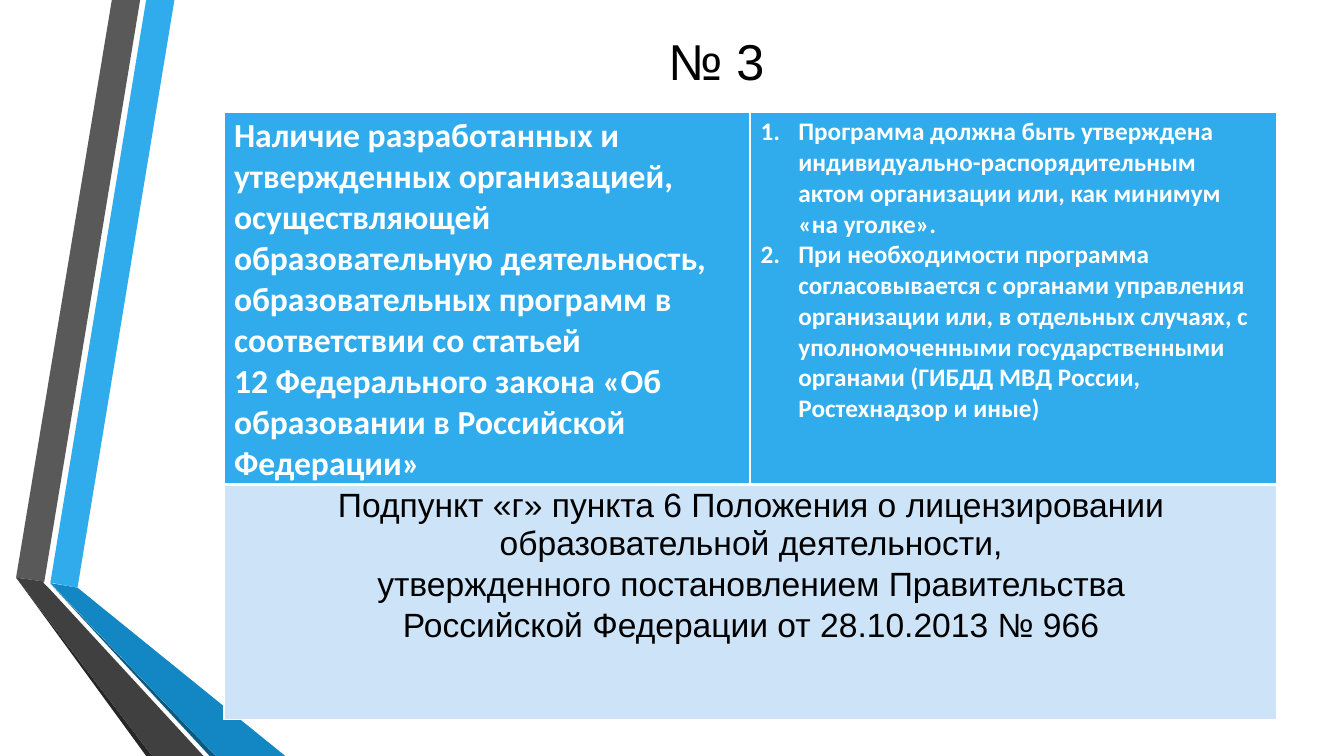
from pptx import Presentation, util as u
from pptx.dml.color import RGBColor
from pptx.enum import text as t
from pptx.oxml.ns import qn
from lxml import etree


def color(fmt, tone):
    fmt.solid()
    fmt.fore_color.rgb = RGBColor.from_string(tone)


def write(par, words, size, font="Arial", tone="000000", bold=False,
          center=False, left=0, hang=0, before=0, number=None):
    par.alignment = t.PP_ALIGN.CENTER if center else t.PP_ALIGN.LEFT
    par.space_before = u.Pt(before)
    run = par.add_run()
    run.text = words
    run.font.size = u.Pt(size)
    run.font.name = font
    run.font.bold = bold
    color(run.font.fill, tone)
    props = par._p.get_or_add_pPr()
    props.set("marL", str(u.Pt(left)))
    props.set("indent", str(u.Pt(-hang)))
    if number:
        mark = etree.SubElement(props, qn("a:buAutoNum"))
        mark.set("type", "arabicPeriod")
        mark.set("startAt", str(number))


deck = Presentation()
deck.slide_width = u.Pt(960)
deck.slide_height = u.Pt(540)
slide = deck.slides.add_slide(deck.slide_layouts[6])

bands = [
    ("30ACEC", [(36, 416.2), (55.4, 419.8), (124.6, 0), (104.4, 0)]),
    ("595959", [(100.1, 0), (79.9, 0), (11.5, 412.6), (31.7, 415.4)]),
    ("262626", [(11.5, 412.6), (104.4, 540), (108.7, 540)]),
    ("0C5A82", [(36, 416.9), (149.8, 540), (154.1, 540)]),
    ("1287C3", [(36, 416.5), (154.1, 540), (203.8, 540), (55.4, 419.8)]),
    ("404040", [(145.4, 540), (34.6, 419.8), (31, 416.2), (31.7, 415.4),
                (11.5, 412.6), (108.7, 540)]),
]
for tone, points in bands:
    spots = [(u.Pt(x), u.Pt(y)) for x, y in points]
    shape = slide.shapes.build_freeform(*spots[0])
    shape.add_line_segments(spots[1:], close=True)
    band = shape.convert_to_shape()
    band.shadow.inherit = False
    color(band.fill, tone)
    band.line.fill.background()

title = slide.shapes.add_textbox(u.Pt(117.2), u.Pt(5.8), u.Pt(789), u.Pt(74))
frame = title.text_frame
frame.word_wrap = True
frame.vertical_anchor = t.MSO_ANCHOR.MIDDLE
write(frame.paragraphs[0], "№ 3", 36, center=True, before=1.1)

grid = slide.shapes.add_table(2, 2, u.Pt(160), u.Pt(80.6), u.Pt(751.6), u.Pt(433.5)).table
for col in grid.columns:
    col.width = u.Pt(375.8)
grid.rows[0].height = u.Pt(265.5)
grid.rows[1].height = u.Pt(168)
grid.cell(1, 0).merge(grid.cell(1, 1))

head = dict(size=24, font="Calibri", tone="FFFFFF", bold=True, left=7.2)
item = dict(size=18, font="Calibri", tone="FFFFFF", bold=True, left=34.5)
base = dict(size=24, center=True, left=1.5, before=2.5)
cells = [
    (0, 0, "30ACEC", 2.2, 0, [
        ("Наличие разработанных и", dict(head, before=2.4)),
        ("утвержденных организацией, осуществляющей образовательную "
         "деятельность, образовательных программ в соответствии со статьей", head),
        ("12 Федерального закона «Об образовании в Российской Федерации»", head),
    ]),
    (0, 1, "30ACEC", 2.9, 10, [
        ("Программа должна быть утверждена индивидуально-распорядительным "
         "актом организации или, как минимум",
         dict(item, hang=27, before=2.6, number=1)),
        ("«на уголке».", item),
        ("При необходимости программа согласовывается с органами управления "
         "организации или, в отдельных случаях, с уполномоченными "
         "государственными органами (ГИБДД МВД России,",
         dict(item, hang=27, number=2)),
        ("Ростехнадзор и иные)", item),
    ]),
    (1, 0, "CDE3F8", 2.2, 0, [
        ("Подпункт «г» пункта 6 Положения о лицензировании образовательной "
         "деятельности,", base),
        ("утвержденного постановлением Правительства", base),
        ("Российской Федерации от 28.10.2013 № 966", base),
    ]),
    (1, 1, "CDE3F8", 2.2, 0, []),
]
for row, col, tone, top, right, lines in cells:
    cell = grid.cell(row, col)
    cell.margin_left = cell.margin_bottom = 0
    cell.margin_right = u.Pt(right)
    cell.margin_top = u.Pt(top)
    for n, (words, style) in enumerate(lines):
        frame = cell.text_frame
        par = frame.add_paragraph() if n else frame.paragraphs[0]
        write(par, words, **style)
    props = cell._tc.get_or_add_tcPr()
    for side in "LRTB":
        thick = 3 if (row, side) in [(0, "B"), (1, "T")] else 1
        edge = etree.SubElement(props, qn("a:ln" + side), w=str(u.Pt(thick)))
        fill = etree.SubElement(edge, qn("a:solidFill"))
        etree.SubElement(fill, qn("a:srgbClr"), val="FFFFFF")
    color(cell.fill, tone)

deck.save("out.pptx")
